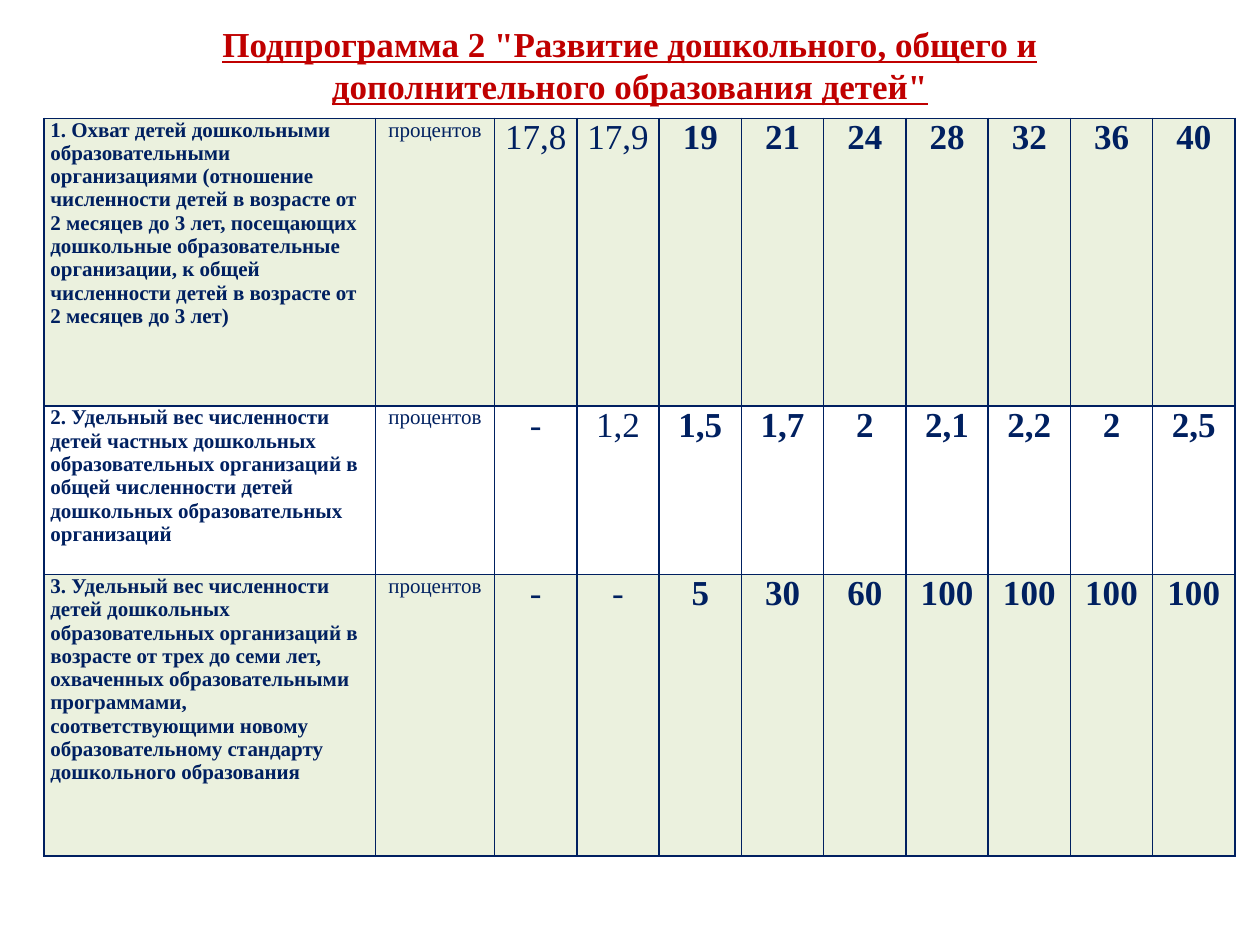
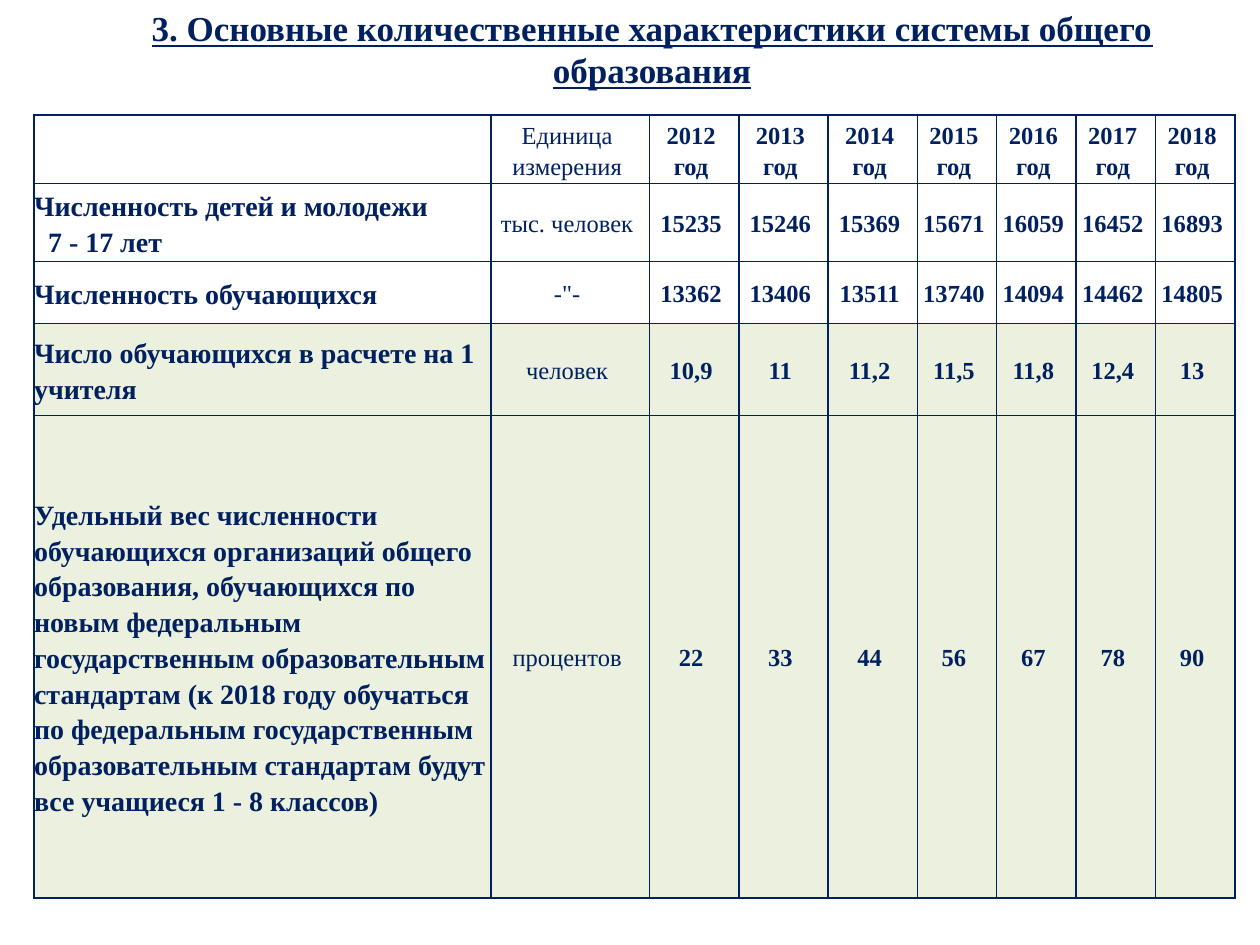
from lxml import etree
from pptx import Presentation
from pptx.dml.color import RGBColor
from pptx.enum.text import MSO_ANCHOR, PP_ALIGN
from pptx.oxml.ns import qn
from pptx.util import Pt

LEFT, CENTER = PP_ALIGN.LEFT, PP_ALIGN.CENTER
TOP, MIDDLE = MSO_ANCHOR.TOP, MSO_ANCHOR.MIDDLE
COLORS = {"navy": "002060", "red": "C00000", "green": "EBF1DE"}
FONT = "Times New Roman"

PROGRAM_TITLE = 'Подпрограмма 2 "Развитие дошкольного, общего и дополнительного образования детей"'
PROGRAM_ROWS = [
    ["1. Охват детей дошкольными образовательными организациями (отношение численности детей "
     "в возрасте от 2 месяцев до 3 лет, посещающих дошкольные образовательные организации, "
     "к общей численности детей в возрасте от 2 месяцев до 3 лет)",
     "процентов", "17,8", "17,9", "19", "21", "24", "28", "32", "36", "40"],
    ["2. Удельный вес численности детей частных дошкольных образовательных организаций "
     "в общей численности детей дошкольных образовательных организаций",
     "процентов", "-", "1,2", "1,5", "1,7", "2", "2,1", "2,2", "2", "2,5"],
    ["3. Удельный вес численности детей дошкольных образовательных организаций в возрасте "
     "от трех до семи лет, охваченных образовательными программами, соответствующими новому "
     "образовательному стандарту дошкольного образования",
     "процентов", "-", "-", "5", "30", "60", "100", "100", "100", "100"],
]

SCHOOL_TITLE = "3. Основные количественные характеристики системы общего образования"
SCHOOL_ROWS = [
    ["", "Единица измерения"] + [f"{year}\nгод" for year in range(2012, 2019)],
    ["Численность детей и молодежи\n7 - 17 лет", "тыс. человек",
     "15235", "15246", "15369", "15671", "16059", "16452", "16893"],
    ["Численность обучающихся", '-"-',
     "13362", "13406", "13511", "13740", "14094", "14462", "14805"],
    ["Число обучающихся в расчете на 1 учителя", "человек",
     "10,9", "11", "11,2", "11,5", "11,8", "12,4", "13"],
    ["Удельный вес численности обучающихся организаций общего образования, обучающихся по новым "
     "федеральным государственным образовательным стандартам (к 2018 году обучаться по "
     "федеральным государственным образовательным стандартам будут все учащиеся 1 - 8 классов)",
     "процентов", "22", "33", "44", "56", "67", "78", "90"],
]


def write_text(frame, text, *, size, color="navy", bold=False, underline=False,
               align=CENTER, spacing=1.0, later_indent=0):
    frame.word_wrap = True
    for index, line in enumerate(text.split("\n")):
        paragraph = frame.paragraphs[0] if index == 0 else frame.add_paragraph()
        paragraph.alignment = align
        paragraph.line_spacing = spacing
        if index and later_indent:
            paragraph._p.get_or_add_pPr().set("marL", str(Pt(later_indent)))
        run = paragraph.add_run()
        run.text = line
        run.font.name = FONT
        run.font.size = Pt(size)
        run.font.bold = bold
        run.font.underline = underline
        run.font.color.rgb = RGBColor.from_string(COLORS[color])


def add_title(slide, text, left, top, width, color, anchor):
    title = slide.shapes.add_textbox(Pt(left), Pt(top), Pt(width), Pt(55.7))
    title.text_frame.vertical_anchor = anchor
    write_text(title.text_frame, text, size=20, color=color, bold=True, underline=True)


def add_borders(cell):
    properties = cell._tc.get_or_add_tcPr()
    for index, side in enumerate(("lnL", "lnR", "lnT", "lnB")):
        line = etree.Element(qn(f"a:{side}"), w=str(Pt(1)))
        fill = etree.SubElement(line, qn("a:solidFill"))
        etree.SubElement(fill, qn("a:srgbClr"), val=COLORS["navy"])
        properties.insert(index, line)


def add_indicators(slide, rows, left, top, widths, heights, shaded_rows, margins, anchor, text_format):
    table = slide.shapes.add_table(len(rows), len(widths), Pt(left), Pt(top),
                                   Pt(sum(widths)), Pt(sum(heights))).table
    table.first_row = table.horz_banding = False
    for column, width in zip(table.columns, widths):
        column.width = Pt(width)
    for row, height in zip(table.rows, heights):
        row.height = Pt(height)
    for r, values in enumerate(rows):
        for c, value in enumerate(values):
            cell = table.cell(r, c)
            cell.vertical_anchor = anchor
            cell.margin_top = cell.margin_bottom = 0
            cell.margin_left = Pt(margins[0])
            cell.margin_right = Pt(margins[1] if c else margins[0])
            if r in shaded_rows:
                cell.fill.solid()
                cell.fill.fore_color.rgb = RGBColor.from_string(COLORS["green"])
            else:
                cell.fill.background()
            add_borders(cell)
            if value:
                write_text(cell.text_frame, value, **text_format(c))


def program_format(column):
    return {"size": 12 if column < 2 else 20, "bold": column == 0 or column > 3,
            "align": CENTER if column else LEFT}


def school_format(column):
    return {"size": 14 if column else 16, "bold": column != 1, "spacing": 1.15,
            "align": CENTER if column else LEFT, "later_indent": 0 if column else 8}


def main():
    deck = Presentation()
    deck.slide_width, deck.slide_height = Pt(720), Pt(540)
    blank = deck.slide_layouts[6]

    program = deck.slides.add_slide(blank)
    add_indicators(program, PROGRAM_ROWS, 25.2, 67.6, [189.3, 68.2] + [47] * 9,
                   [164.5, 96.3, 160.8], {0, 2}, (3.6, 3.6), TOP, program_format)
    add_title(program, PROGRAM_TITLE, 48.2, 9.4, 623.5, "red", TOP)

    school = deck.slides.add_slide(blank)
    add_indicators(school, SCHOOL_ROWS, 19.5, 65.7, [261, 90.7] + [51] * 3 + [45.4] * 4,
                   [39.3, 44.5, 35.3, 52.6, 275.8], {3, 4}, (0, 3.5), MIDDLE, school_format)
    add_title(school, SCHOOL_TITLE, 25.2, 0, 694.8, "navy", MIDDLE)

    deck.save("out.pptx")


if __name__ == "__main__":
    main()
